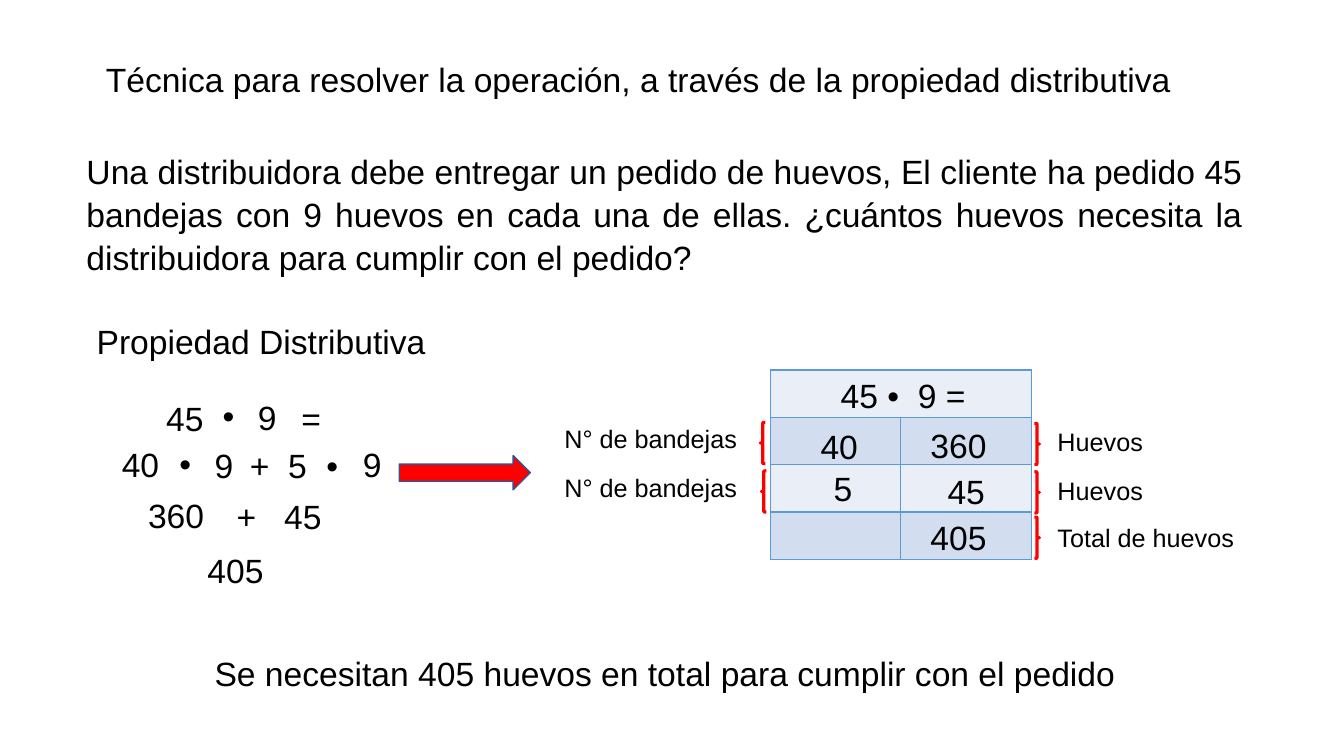
import pptx
import pptx.dml.color
import pptx.enum.shapes
import pptx.enum.text
import pptx.oxml
import pptx.oxml.ns
import pptx.util
from pptx.util import Inches

FONT = "Arial"
BLACK, RED, BLUE, NAVY = "000000", "FF0000", "5B9BD5", "325491"
BANDS = ("EAEFF7", "D2DEEF")
ROW_HEIGHT, COLUMN_WIDTH = 0.47, 1.295
ALIGN = pptx.enum.text.PP_ALIGN
SHAPE = pptx.enum.shapes.MSO_SHAPE


def color(value):
    """Return the RGB colour for a hex string."""
    return pptx.dml.color.RGBColor.from_string(value)


def write(frame, text, size=24, align=ALIGN.LEFT):
    """Fill a text frame with one formatted paragraph and return it."""
    frame.word_wrap = True
    frame.vertical_anchor = pptx.enum.text.MSO_ANCHOR.TOP
    paragraph = frame.paragraphs[0]
    paragraph.text = text
    paragraph.alignment = align
    paragraph.font.name = FONT
    paragraph.font.size = pptx.util.Pt(size)
    paragraph.font.color.rgb = color(BLACK)
    return paragraph


def add_text(slide, text, left, top, width, height=0.5, size=24, align=ALIGN.LEFT):
    """Add a text box and return its paragraph."""
    box = slide.shapes.add_textbox(*map(Inches, (left, top, width, height)))
    return write(box.text_frame, text, size, align)


def add_outlined(slide, kind, left, top, width, height, line, weight, fill=None):
    """Add a preset shape with an outline and an optional fill."""
    shape = slide.shapes.add_shape(kind, *map(Inches, (left, top, width, height)))
    shape.shadow.inherit = False
    if fill:
        shape.fill.solid()
        shape.fill.fore_color.rgb = color(fill)
    else:
        shape.fill.background()
    shape.line.color.rgb = color(line)
    shape.line.width = pptx.util.Pt(weight)
    return shape


def add_title(slide, text, left, top, width, height):
    """Place and format the title placeholder."""
    title = slide.shapes.title
    title.left, title.top, title.width, title.height = map(Inches, (left, top, width, height))
    title.text_frame.auto_size = pptx.enum.text.MSO_AUTO_SIZE.NONE
    write(title.text_frame, text)


def add_problem(slide, left, top, width, height):
    """Add the justified statement of the problem."""
    paragraph = add_text(
        slide,
        "Una distribuidora debe entregar un pedido de huevos, El cliente ha pedido 45 "
        "bandejas con 9 huevos en cada una de ellas. ¿cuántos huevos necesita la "
        "distribuidora para cumplir con el pedido?",
        left, top, width, height, align=ALIGN.JUSTIFY)
    paragraph.line_spacing = 1.07
    paragraph.space_after = pptx.util.Pt(8)


def add_steps(slide, left, top):
    """Add the heading, the steps of the calculation and the arrow."""
    add_text(slide, "Propiedad Distributiva", left, top, 3.71)
    steps = [
        ("45", 0.69, 0.77), ("•", 1.25, 0.74), ("9", 1.6, 0.76), ("=", 2.03, 0.77),
        ("40", 0.25, 1.22), ("•", 0.82, 1.21), ("9", 1.17, 1.23), ("+", 1.52, 1.23),
        ("5", 1.9, 1.23), ("•", 2.28, 1.23), ("9", 2.64, 1.22),
        ("360", 0.51, 1.73), ("+", 1.39, 1.74), ("45", 1.86, 1.74),
        ("405", 1.1, 2.28),
    ]
    for term, across, down in steps:
        add_text(slide, term, left + across, top + down, 0.3 + 0.2 * len(term))
    add_outlined(slide, SHAPE.RIGHT_ARROW, left + 3.1, top + 1.39, 1.3, 0.34, NAVY, 1, RED)


def add_borders(cell):
    """Draw thin blue borders on the four sides of a cell."""
    properties = cell._tc.get_or_add_tcPr()
    for position, side in enumerate(("lnL", "lnR", "lnT", "lnB")):
        properties.insert(position, pptx.oxml.parse_xml(
            f'<a:{side} {pptx.oxml.ns.nsdecls("a")} w="12700"><a:solidFill>'
            f'<a:srgbClr val="{BLUE}"/></a:solidFill></a:{side}>'))


def add_product_table(slide, left, top):
    """Add the banded grid and the partial products that lie over it."""
    table = slide.shapes.add_table(
        4, 2, Inches(left), Inches(top),
        Inches(2 * COLUMN_WIDTH), Inches(4 * ROW_HEIGHT)).table
    for column in table.columns:
        column.width = Inches(COLUMN_WIDTH)
    table.cell(0, 0).merge(table.cell(0, 1))
    for index, row in enumerate(table.rows):
        row.height = Inches(ROW_HEIGHT)
        for cell in row.cells:
            cell.fill.solid()
            cell.fill.fore_color.rgb = color(BANDS[index % 2])
            add_borders(cell)
    products = [
        ("45 •  9 =", 0.6, 0, 1.6),
        ("40", 0.4, 0.51, 0.66), ("360", 1.49, 0.5, 0.86),
        ("5", 0.53, 0.92, 0.43), ("45", 1.66, 0.95, 0.66),
        ("405", 1.49, 1.41, 0.86),
    ]
    for text, across, down, width in products:
        add_text(slide, text, left + across, top + down, width)


def add_row_labels(slide, left, top):
    """Add the braces and labels on both sides of the table."""
    labels = [
        ("N° de bandejas", -2.14, 0.48, -0.1, 0.52, 180),
        ("N° de bandejas", -2.14, 0.97, -0.09, 1.0, 180),
        ("Huevos", 2.75, 0.51, 2.62, 0.53, 0),
        ("Huevos", 2.75, 1.0, 2.62, 1.01, 0),
        ("Total de huevos", 2.75, 1.46, 2.62, 1.46, 0),
    ]
    for text, text_across, text_down, brace_across, brace_down, rotation in labels:
        add_text(slide, text, left + text_across, top + text_down, 2.1, 0.4, 18)
        brace = add_outlined(slide, SHAPE.RIGHT_BRACE, left + brace_across,
                             top + brace_down, 0.05, 0.41, RED, 2.25)
        brace.rotation = rotation


def main():
    """Build and save the slide."""
    presentation = pptx.Presentation()
    presentation.slide_width, presentation.slide_height = Inches(13.33), Inches(7.5)
    slide = presentation.slides.add_slide(presentation.slide_layouts.get_by_name("Title Only"))
    add_title(slide, "Técnica para resolver la operación, a través de la propiedad distributiva",
              0.95, 0.53, 11, 0.5)
    add_problem(slide, 0.76, 1.42, 11.66, 1.38)
    add_steps(slide, 0.86, 3.13)
    add_product_table(slide, 7.64, 3.67)
    add_row_labels(slide, 7.64, 3.67)
    add_text(slide, "Se necesitan 405 huevos en total para cumplir con el pedido", 2.03, 6.43, 9.58)
    presentation.save("out.pptx")


if __name__ == "__main__":
    main()
